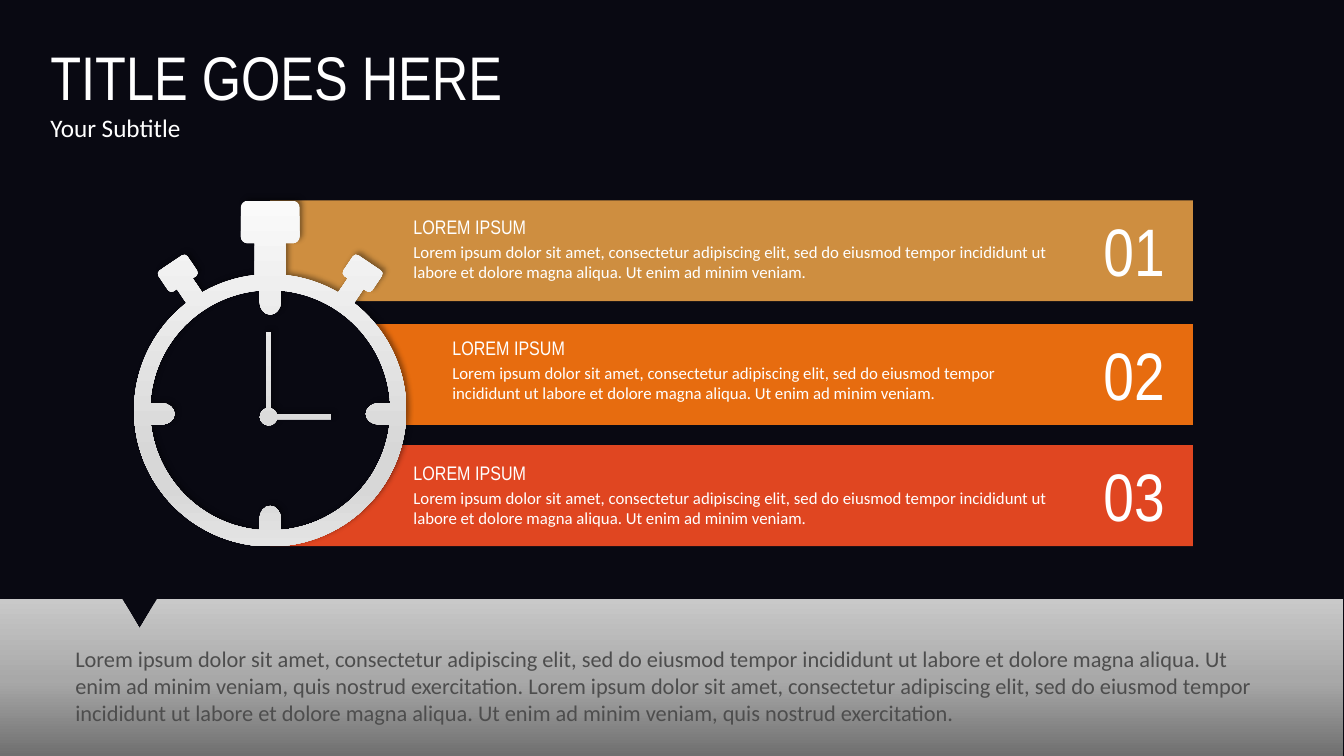
"""Build a stopwatch infographic slide with three numbered banners."""
import math
from typing import Any, NamedTuple
import pptx
import pptx.dml.color
import pptx.enum.shapes
import pptx.enum.text
import pptx.oxml
import pptx.oxml.ns
import pptx.util

Cm = pptx.util.Cm
qn = pptx.oxml.ns.qn
NAMESPACE = pptx.oxml.ns.nsdecls("a")
HEADING_FONT, BODY_FONT, WHITE = "Arial Narrow", "Calibri", "FFFFFF"
LEFT, CENTRE = pptx.enum.text.PP_ALIGN.LEFT, pptx.enum.text.PP_ALIGN.CENTER
FRAME_FORMAT = {
    "word_wrap": True, "vertical_anchor": pptx.enum.text.MSO_ANCHOR.TOP,
    "auto_size": pptx.enum.text.MSO_AUTO_SIZE.SHAPE_TO_FIT_TEXT,
    "margin_left": Cm(0.25), "margin_right": Cm(0.25),
    "margin_top": Cm(0.13), "margin_bottom": Cm(0.13),
}
TIGHT_FORMAT = FRAME_FORMAT | {
    "margin_left": Cm(0.18), "margin_right": Cm(0.18),
    "margin_top": Cm(0.08), "margin_bottom": Cm(0.08),
}
LOREM = ("Lorem ipsum dolor sit amet, consectetur adipiscing elit, sed do eiusmod tempor "
         "incididunt ut labore et dolore magna aliqua. Ut enim ad minim veniam")
CAPTION = " ".join([LOREM + ", quis nostrud exercitation."] * 2)


class Point(NamedTuple):
    x: float
    y: float
    control: bool = False


class Area(NamedTuple):
    left: float
    top: float
    width: float
    height: float


class Line(NamedTuple):
    text: str
    size: float
    font: str = BODY_FONT
    colour: str = WHITE
    align: Any = LEFT
    before: float = 0


class Spoke(NamedTuple):
    angle: float
    profile: list[Point]
    shift: float = 0


class Banner(NamedTuple):
    number: str
    colour: str
    top: float
    text: Area


DIAL = Point(6.81, 10.34)
BANNER_RIGHT, BANNER_HEIGHT = 30.06, 2.54
BANNERS = [
    Banner("03", "E04621", 11.22, Area(10.24, 11.53, 16.81, 1.93)),
    Banner("02", "E76C0F", 8.17, Area(11.22, 8.39, 15.67, 1.93)),
    Banner("01", "CE8E40", 5.05, Area(10.24, 5.33, 16.81, 1.93)),
]


def set_all(target: Any, values: dict[str, Any]) -> None:
    for name, value in values.items():
        setattr(target, name, value)


def paint(fill: Any, colour: str) -> None:
    fill.solid()
    fill.fore_color.rgb = pptx.dml.color.RGBColor.from_string(colour)


def paint_gradient(shape: Any, stops: list[tuple[int, str]]) -> None:
    shape.fill.gradient()
    shape.fill.gradient_angle = 270
    stop_list = shape._element.spPr.find(".//" + qn("a:gsLst"))
    stop_list.clear()
    for percent, colour in stops:
        stop_list.append(pptx.oxml.parse_xml(
            f'<a:gs {NAMESPACE} pos="{percent * 1000}"><a:srgbClr val="{colour}"/></a:gs>'))


def write(box: Any, lines: list[Line], frame_format: dict[str, Any]) -> None:
    set_all(box.text_frame, frame_format)
    for index, line in enumerate(lines):
        para = box.text_frame.add_paragraph() if index else box.text_frame.paragraphs[0]
        set_all(para, {"alignment": line.align, "space_before": pptx.util.Pt(line.before)})
        span = para.add_run()
        span.text = line.text
        set_all(span.font, {"name": line.font, "size": pptx.util.Pt(line.size)})
        paint(span.font.fill, line.colour)


def add_text(page: Any, area: Area, lines: list[Line],
             frame_format: dict[str, Any] = FRAME_FORMAT) -> None:
    write(page.shapes.add_textbox(*map(Cm, area)), lines, frame_format)


def add_outline(page: Any, contours: list[list[Point]]) -> Any:
    builder = page.shapes.build_freeform(Cm(contours[0][0].x), Cm(contours[0][0].y))
    for index, contour in enumerate(contours):
        points = [(Cm(point.x), Cm(point.y)) for point in contour]
        if index:
            builder.move_to(*points[0])
        builder.add_line_segments(points[1:], close=True)
    shape = builder.convert_to_shape()
    controls = [point.control for contour in contours for point in contour[1:]]
    pending: list[Any] = []
    for segment, control in zip(list(shape._element.iter(qn("a:lnTo"))), controls):
        if control:
            pending.append(segment)
        elif pending:
            segment.tag = qn("a:cubicBezTo")
            for place, handle in enumerate(pending):
                segment.insert(place, handle[0])
                handle.getparent().remove(handle)
            pending = []
    shape.line.fill.background()
    shape.shadow.inherit = False
    return shape


def arc(centre: Point, across: float, along: float, start: float, end: float) -> list[Point]:
    steps = max(1, math.ceil(abs(end - start) / 90))
    sweep = math.radians(end - start) / steps
    reach = 4 / 3 * math.tan(sweep / 4)
    points: list[Point] = []
    for step in range(steps + 1):
        angle = math.radians(start) + sweep * step
        x, y = centre.x + across * math.sin(angle), centre.y - along * math.cos(angle)
        dx, dy = reach * across * math.cos(angle), reach * along * math.sin(angle)
        points += [Point(x - dx, y - dy, True), Point(x, y), Point(x + dx, y + dy, True)]
    return points[1:-1]


def cap(stem: float, half: float, base: float, top: float, corner: float) -> list[Point]:
    inner = half - corner
    return [Point(stem, base), *arc(Point(inner, base + corner), corner, corner, 0, 90),
            *arc(Point(inner, top - corner), corner, corner, 90, 180)]


def rim(centre: Point, radius: float, spokes: list[Spoke]) -> list[Point]:
    points: list[Point] = []
    for spoke, following in zip(spokes, spokes[1:] + spokes[:1]):
        turn = math.radians(spoke.angle)
        sine, cosine = math.sin(turn), math.cos(turn)
        sides = [Point(-point.x, point.y, point.control) for point in spoke.profile]
        for x, y, control in sides + spoke.profile[::-1]:
            x += spoke.shift
            points.append(Point(centre.x + x * cosine + y * sine,
                                centre.y + x * sine - y * cosine, control))
        start = spoke.angle + math.degrees(math.asin((spoke.shift + spoke.profile[0].x) / radius))
        end = following.angle + math.degrees(
            math.asin((following.shift - following.profile[0].x) / radius))
        points += arc(centre, radius, radius, start, end + 360 * (end < start))
    return points


def add_banner(page: Any, banner: Banner) -> None:
    bottom, radius = banner.top + BANNER_HEIGHT, 3.3
    start, end = (math.degrees(math.acos(max(-1, min(1, (DIAL.y - y) / radius))))
                  for y in (bottom, banner.top))
    edge = arc(DIAL, radius, radius, start, end)
    shape = add_outline(page, [[Point(BANNER_RIGHT, banner.top), Point(BANNER_RIGHT, bottom),
                                Point(edge[0].x, bottom), *edge, Point(edge[-1].x, banner.top)]])
    paint(shape.fill, banner.colour)
    add_text(page, banner.text, [Line("LOREM IPSUM", 14, HEADING_FONT),
                                 Line(LOREM + ".", 12, before=2.4)], TIGHT_FORMAT)
    add_text(page, Area(27.31, banner.top + 0.1, 2.54, 2.31),
             [Line(banner.number, 48, HEADING_FONT, align=CENTRE)])


def add_stopwatch(page: Any) -> None:
    button, crown = cap(0.24, 0.44, 3.85, 4.48, 0.1), cap(0.39, 0.74, 4.21, 5.28, 0.17)
    notch = arc(Point(0, 2.74), 0.27, 0.33, 90, 0)
    marks = [Spoke(angle, notch, 0.09 * math.sin(math.radians(angle)))
             for angle in range(0, 360, 90)]
    hands = [Spoke(0, [Point(0.06, 2.13)]), Spoke(90, [Point(0.06, 1.57)])]
    knobs = [Spoke(-34, button), Spoke(0, crown), Spoke(34, button)]
    shape = add_outline(page, [rim(DIAL, 3.43, knobs), rim(DIAL, 3.03, marks),
                               rim(Point(6.77, 10.5), 0.22, hands)])
    paint_gradient(shape, [(0, "FAFAFA"), (74, "D7D7D7"), (83, "D7D7D7"), (100, "E4E4E4")])
    shape._element.spPr.find(qn("a:effectLst")).append(pptx.oxml.parse_xml(
        f'<a:outerShdw {NAMESPACE} blurRad="50800" dist="38100" dir="18900000">'
        '<a:srgbClr val="000000"><a:alpha val="40000"/></a:srgbClr></a:outerShdw>'))


def add_backdrop(page: Any, deck: Any) -> None:
    paint(page.background.fill, "20213D")
    shade = page.shapes.add_shape(pptx.enum.shapes.MSO_SHAPE.RECTANGLE, 0, 0,
                                  deck.slide_width, deck.slide_height)
    paint(shade.fill, "000000")
    shade.line.fill.background()
    shade.shadow.inherit = False
    shade._element.spPr.find(".//" + qn("a:srgbClr")).append(
        pptx.oxml.parse_xml(f'<a:alpha {NAMESPACE} val="70000"/>'))
    deck.slide_master.shapes._spTree.insert(2, shade._element)


def main() -> None:
    deck = pptx.Presentation()
    set_all(deck, {"slide_width": Cm(33.87), "slide_height": Cm(19.05)})
    page = deck.slides.add_slide(deck.slide_layouts[5])
    add_backdrop(page, deck)
    title = page.shapes.title
    set_all(title, {"left": Cm(1.02), "top": Cm(0.84), "width": Cm(16.51), "height": Cm(2.9)})
    write(title, [Line("TITLE GOES HERE", 44, HEADING_FONT), Line("Your Subtitle", 18)],
          FRAME_FORMAT)
    panel = add_outline(page, [[Point(0, 15.09), Point(3.08, 15.09), Point(3.52, 15.84),
                                Point(3.96, 15.09), Point(33.84, 15.09), Point(33.84, 19.05),
                                Point(0, 19.05)]])
    paint_gradient(panel, [(0, "C9C9C9"), (52, "A8A8A8"), (100, "6F6F6F")])
    for banner in BANNERS:
        add_banner(page, banner)
    add_stopwatch(page)
    add_text(page, Area(1.65, 16.13, 30.56, 2.31), [Line(CAPTION, 16, colour="4D4D4D")])
    deck.save("out.pptx")


if __name__ == "__main__":
    main()
